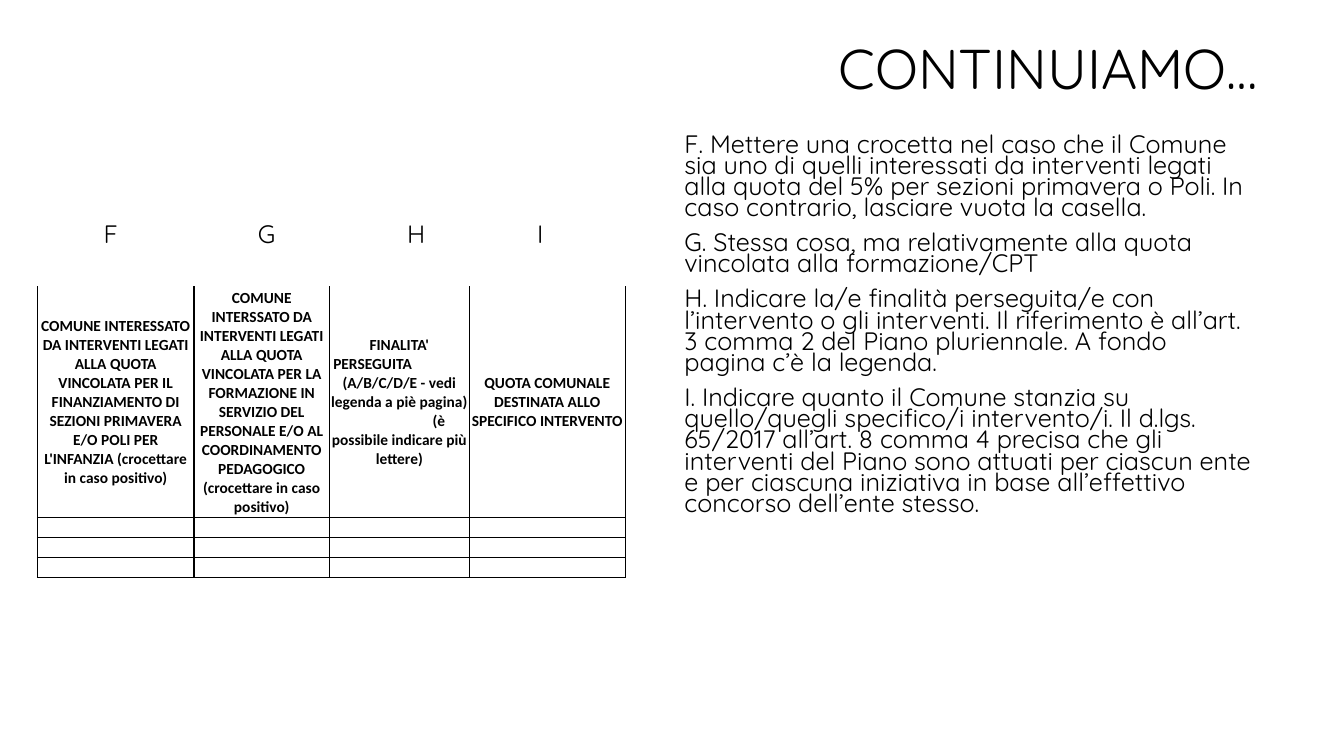
import pptx
import pptx.util
import pptx.dml.color
import pptx.enum.text
import pptx.oxml.ns
import lxml.etree

Pt = pptx.util.Pt
ALIGN = pptx.enum.text.PP_ALIGN
ANCHOR = pptx.enum.text.MSO_ANCHOR
AUTO_SIZE = pptx.enum.text.MSO_AUTO_SIZE
qn = pptx.oxml.ns.qn
BLACK = "000000"


def format_runs(paragraph, size, font_name, bold=False):
    for run in paragraph.runs:
        run.font.size = Pt(size)
        run.font.name = font_name
        run.font.bold = bold
        run.font.color.rgb = pptx.dml.color.RGBColor.from_string(BLACK)


def add_border(cell, side, width):
    """Draw one cell side (L, R, T or B); a width of 0 hides it."""
    properties = cell._tc.get_or_add_tcPr()
    line = lxml.etree.SubElement(properties, qn(f"a:ln{side}"), w=str(Pt(width)))
    if width:
        fill = lxml.etree.SubElement(line, qn("a:solidFill"))
        lxml.etree.SubElement(fill, qn("a:srgbClr"), val=BLACK)
    else:
        lxml.etree.SubElement(line, qn("a:noFill"))


presentation = pptx.Presentation()
presentation.slide_width = Pt(960)
presentation.slide_height = Pt(540)
slide = presentation.slides.add_slide(presentation.slide_layouts[1])

# Title
title = slide.shapes.title
title.left, title.top, title.width, title.height = Pt(539.3), Pt(0), Pt(366.5), Pt(101.5)
title.text_frame.text = "CONTINUIAMO…"
title.text_frame.auto_size = AUTO_SIZE.NONE
title.text_frame.vertical_anchor = ANCHOR.MIDDLE
paragraph = title.text_frame.paragraphs[0]
paragraph.alignment = ALIGN.RIGHT
paragraph.line_spacing = 0.9
format_runs(paragraph, 40, "Quicksand")

# Form table: each header line is (text, alignment, left indent in points)
headers = [
    [("COMUNE INTERESSATO DA INTERVENTI LEGATI ALLA QUOTA VINCOLATA PER IL "
      "FINANZIAMENTO DI SEZIONI PRIMAVERA E/O POLI PER L'INFANZIA "
      "(crocettare in caso positivo)", ALIGN.CENTER, 0)],
    [("COMUNE INTERSSATO DA INTERVENTI LEGATI ALLA QUOTA VINCOLATA PER LA "
      "FORMAZIONE IN SERVIZIO DEL PERSONALE E/O AL COORDINAMENTO PEDAGOGICO "
      "(crocettare in caso positivo)", ALIGN.CENTER, 0)],
    [("FINALITA'", ALIGN.CENTER, 0),
     ("PERSEGUITA", ALIGN.LEFT, 2),
     ("(A/B/C/D/E - vedi legenda a piè pagina)", ALIGN.CENTER, 0),
     ("(è", ALIGN.LEFT, 73),
     ("possibile indicare più lettere)", ALIGN.CENTER, 0)],
    [("QUOTA COMUNALE DESTINATA ALLO SPECIFICO INTERVENTO", ALIGN.CENTER, 0)],
]
column_widths = [111.8, 96.8, 99.8, 111.6]
row_heights = [165.2, 13.6, 13.6, 13.6]
table = slide.shapes.add_table(
    len(row_heights), len(column_widths),
    Pt(26.8), Pt(204.5), Pt(sum(column_widths)), Pt(sum(row_heights))).table
table.first_row = False
table.horz_banding = False
for column, width in zip(table.columns, column_widths):
    column.width = Pt(width)

for row_index, height in enumerate(row_heights):
    table.rows[row_index].height = Pt(height)
    top_width = [0, 1, 0.5, 0.5][row_index]
    bottom_width = 1 if row_index == 0 else 0.5
    for column_index, header in enumerate(headers):
        cell = table.cell(row_index, column_index)
        cell.margin_left = cell.margin_right = cell.margin_top = Pt(0.7)
        cell.margin_bottom = Pt(0)
        cell.vertical_anchor = ANCHOR.MIDDLE
        for side, width in [("L", 1), ("R", 1), ("T", top_width), ("B", bottom_width)]:
            add_border(cell, side, width)
        cell.fill.background()
        if row_index:
            cell.text_frame.paragraphs[0].font.size = Pt(11)
            continue
        cell.text_frame.text = "\n".join(text for text, _, _ in header)
        for paragraph, (_, alignment, indent) in zip(cell.text_frame.paragraphs, header):
            paragraph.alignment = alignment
            paragraph._p.get_or_add_pPr().set("marL", str(Pt(indent)))
            format_runs(paragraph, 11, "Calibri", bold=True)

# Explanations of the columns
explanations = [
    "F. Mettere una crocetta nel caso che il Comune sia uno di quelli interessati da "
    "interventi legati alla quota del 5% per sezioni primavera o Poli. In caso contrario, "
    "lasciare vuota la casella.",
    "G. Stessa cosa, ma relativamente alla quota vincolata alla formazione/CPT",
    "H. Indicare la/e finalità perseguita/e con l’intervento o gli interventi. Il "
    "riferimento è all’art. 3 comma 2 del Piano pluriennale. A fondo pagina c’è la legenda.",
    "I. Indicare quanto il Comune stanzia su quello/quegli specifico/i intervento/i. Il "
    "d.lgs. 65/2017 all’art. 8 comma 4 precisa che gli interventi del Piano sono attuati "
    "per ciascun ente e per ciascuna iniziativa in base all’effettivo concorso dell’ente "
    "stesso.",
]
body = slide.placeholders[1]
body.left, body.top, body.width, body.height = Pt(481.7), Pt(93.6), Pt(419.8), Pt(316.8)
body.text_frame.text = "\n".join(explanations)
body.text_frame.auto_size = AUTO_SIZE.NONE
body.text_frame.vertical_anchor = ANCHOR.TOP
for index, paragraph in enumerate(body.text_frame.paragraphs):
    paragraph.line_spacing = 0.7
    paragraph.space_before = Pt(10 if index else 0)
    properties = paragraph._p.get_or_add_pPr()
    properties.set("marL", "0")
    properties.set("indent", "0")
    lxml.etree.SubElement(properties, qn("a:buNone"))
    format_runs(paragraph, 18, "Quicksand")

# Column letters above the table
for letter, left in [("F", 67), ("G", 177.1), ("H", 283.7), ("I", 376.6)]:
    label = slide.shapes.add_textbox(Pt(left), Pt(152.6), Pt(28), Pt(29))
    label.text_frame.word_wrap = True
    label.text_frame.auto_size = AUTO_SIZE.SHAPE_TO_FIT_TEXT
    label.text_frame.text = letter
    format_runs(label.text_frame.paragraphs[0], 18, "Quicksand")

presentation.save("out.pptx")
